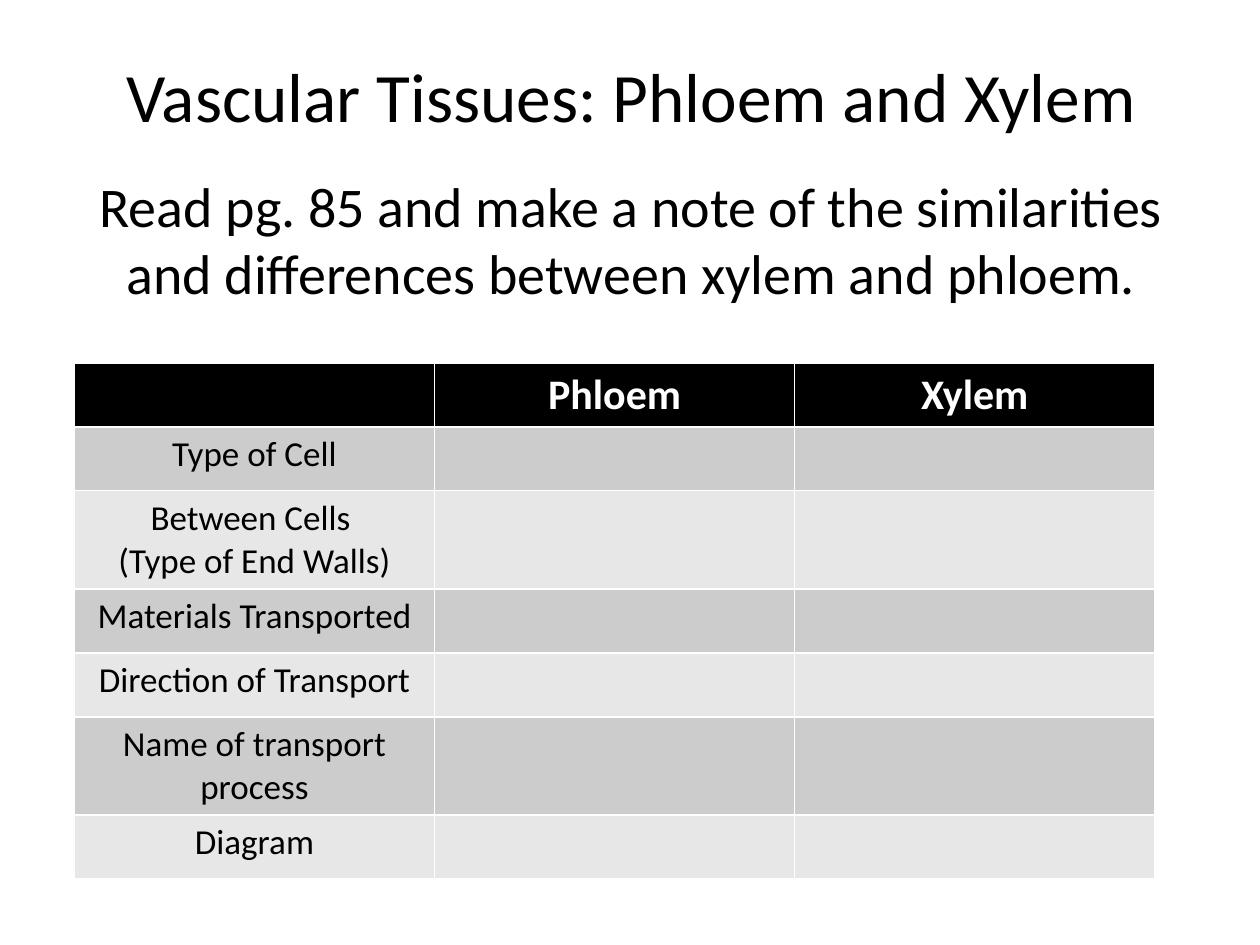
"""Build a slide with a blank comparison table for phloem and xylem."""
import pptx
import pptx.dml.color
import pptx.enum.text
import pptx.util
import lxml.etree

Cm = pptx.util.Cm
COLORS = {"black": "000000", "white": "FFFFFF", "dark": "CCCCCC", "light": "E7E7E7"}
FORMATS = {
    "title": {"size": pptx.util.Pt(39.6)},
    "body": {"size": pptx.util.Pt(32)},
    "header": {"size": pptx.util.Pt(24), "bold": True},
    "label": {"size": pptx.util.Pt(20), "bold": False},
}
LABELS = [
    "Type of Cell",
    "Between Cells \n(Type of End Walls)",
    "Materials Transported",
    "Direction of Transport",
    "Name of transport process",
    "Diagram",
]
ROWS = [["", "Phloem", "Xylem"]] + [[label, "", ""] for label in LABELS]
HEIGHTS = [1.28, 1.28, 1.98, 1.29, 1.29, 1.98, 1.29]


def rgb(name):
    """Return the named colour."""
    return pptx.dml.color.RGBColor.from_string(COLORS[name])


class SlideBuilder:
    """Hold the style and the current slide."""

    def __init__(self, prs, font="Calibri"):
        """Add a title and content slide to the presentation."""
        self.font = font
        self.s = prs.slides.add_slide(prs.slide_layouts[1])

    def text(self, tf, text, style, color="black"):
        """Write centred text in the given style."""
        tf.text = text
        for p in tf.paragraphs:
            p.alignment = pptx.enum.text.PP_ALIGN.CENTER
            for r in p.runs:
                for key, value in {"name": self.font, **FORMATS[style]}.items():
                    setattr(r.font, key, value)
                r.font.color.rgb = rgb(color)

    def placeholder(self, idx, box, text, style):
        """Move and fill a placeholder, without bullets."""
        sp = self.s.placeholders[idx]
        for key, value in zip(("left", "top", "width", "height"), box):
            setattr(sp, key, Cm(value))
        self.text(sp.text_frame, text, style)
        for p in sp.text_frame.paragraphs:
            pPr = p._p.get_or_add_pPr()
            pPr.set("marL", "0")
            pPr.set("indent", "0")
            lxml.etree.SubElement(pPr, pptx.oxml.ns.qn("a:buNone"))

    def table(self, left, top, col_width, heights, rows):
        """Add a table with a black header and grey bands."""
        n_cols = len(rows[0])
        table = self.s.shapes.add_table(
            len(rows), n_cols, Cm(left), Cm(top), Cm(col_width * n_cols), Cm(sum(heights))
        ).table
        for i, (height, texts) in enumerate(zip(heights, rows)):
            table.rows[i].height = Cm(height)
            band = "dark" if i % 2 else "light"
            fill, style, color = (band, "label", "black") if i else ("black", "header", "white")
            for j, text in enumerate(texts):
                cell = table.cell(i, j)
                cell.fill.solid()
                cell.fill.fore_color.rgb = rgb(fill)
                if text:
                    self.text(cell.text_frame, text, style, color)


def main():
    """Build and save the slide."""
    prs = pptx.Presentation()
    prs.slide_width, prs.slide_height = Cm(25.4), Cm(19.05)
    slide = SlideBuilder(prs)
    slide.placeholder(0, (1.3, 0.33, 22.86, 3.18), "Vascular Tissues: Phloem and Xylem", "title")
    slide.placeholder(
        1,
        (1.3, 3.33, 22.86, 3.2),
        "Read pg. 85 and make a note of the similarities and differences "
        "between xylem and phloem.",
        "body",
    )
    slide.table(1.5, 7.32, 7.26, HEIGHTS, ROWS)
    prs.save("out.pptx")


if __name__ == "__main__":
    main()
